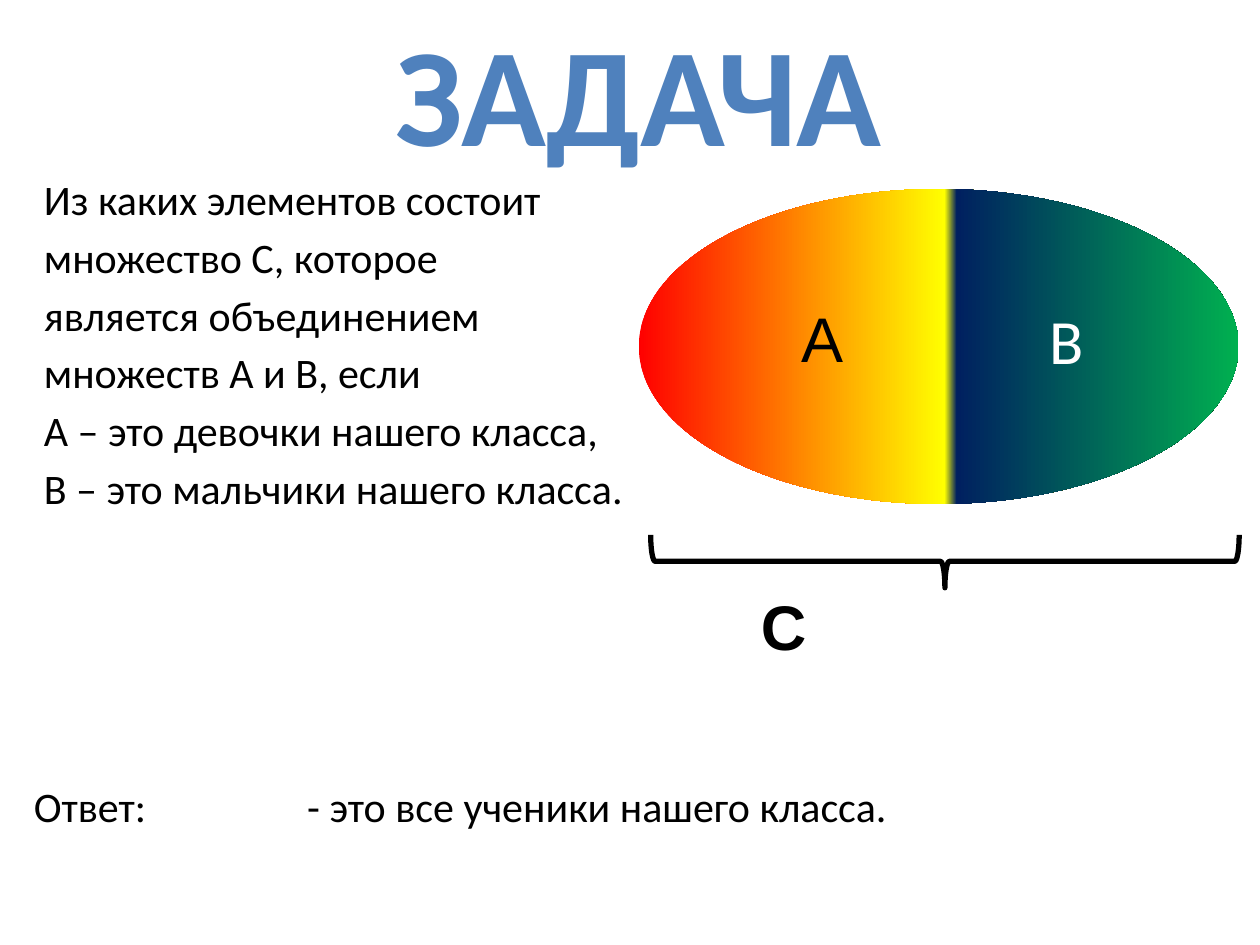
from dataclasses import dataclass

from lxml import etree
from pptx import Presentation
from pptx.dml.color import RGBColor
from pptx.enum import shapes, text
from pptx.oxml import ns
from pptx.util import Inches, Pt


@dataclass(frozen=True)
class Theme:
    black: str = "000000"
    white: str = "FFFFFF"
    heading: str = "4F81BD"
    gradient: tuple = ((0, "FF0000"), (51, "FFFF00"), (53, "002060"), (100, "00B050"))
    title_size: int = 80
    label_size: int = 36
    body_size: int = 24
    body_font: str = "Calibri"
    label_font: str = "Arial"


theme = Theme()


def format_text(box, size, font, color, bold=False):
    for para in box.text_frame.paragraphs:
        for span in para.runs:
            span.font.size = Pt(size)
            span.font.name = font
            span.font.bold = bold
            span.font.color.rgb = RGBColor.from_string(color)


def add_text(page, words, left, top, width, height):
    box = page.shapes.add_textbox(Inches(left), Inches(top), Inches(width), Inches(height))
    box.text_frame.word_wrap = True
    box.text_frame.text = words
    return box


deck = Presentation()
deck.slide_width = Inches(10)
deck.slide_height = Inches(7.5)
page = deck.slides.add_slide(deck.slide_layouts[5])

title = page.shapes.title
title.left, title.top = Inches(3.02), Inches(0)
title.width, title.height = Inches(4.1), Inches(1.45)
title.text_frame.text = "ЗАДАЧА"
title.text_frame.word_wrap = False
title.text_frame.auto_size = text.MSO_AUTO_SIZE.NONE
title.text_frame.vertical_anchor = text.MSO_ANCHOR.TOP
title.text_frame.paragraphs[0].alignment = text.PP_ALIGN.CENTER
format_text(title, theme.title_size, theme.body_font, theme.heading, bold=True)

task_lines = [
    "Из каких элементов состоит",
    "множество С, которое",
    "является объединением",
    "множеств А и В, если",
    "А – это девочки нашего класса,",
    "В – это мальчики нашего класса.",
]
task = add_text(page, "\n".join(task_lines), 0.25, 1.33, 5.33, 3)
for para in task.text_frame.paragraphs[1:]:
    para.space_before = Pt(4.2)
format_text(task, theme.body_size, theme.body_font, theme.black)

answer = add_text(page, "Ответ:\t- это все ученики нашего класса.", 0.17, 6.19, 8.67, 0.47)
para = answer.text_frame.paragraphs[0]
para.line_spacing = 0.9
tabs = etree.SubElement(para._p.get_or_add_pPr(), ns.qn("a:tabLst"))
etree.SubElement(tabs, ns.qn("a:tab"), pos=str(Inches(2.17)), algn="l")
format_text(answer, theme.body_size, theme.body_font, theme.black)

union = page.shapes.add_shape(
    shapes.MSO_SHAPE.OVAL, Inches(5.07), Inches(1.5), Inches(4.76), Inches(2.5)
)
union.shadow.inherit = False
union.line.fill.background()
union.fill.gradient()
union.fill.gradient_angle = 0
stops = union._element.spPr.find(".//" + ns.qn("a:gsLst"))
for stop in list(stops):
    stops.remove(stop)
for percent, color in theme.gradient:
    stop = etree.SubElement(stops, ns.qn("a:gs"), pos=str(percent * 1000))
    etree.SubElement(stop, ns.qn("a:srgbClr"), val=color)

brace = page.shapes.add_shape(
    shapes.MSO_SHAPE.LEFT_BRACE, Inches(7.29), Inches(2.12), Inches(0.42), Inches(4.67)
)
brace.rotation = 270
brace.shadow.inherit = False
brace.fill.background()
brace.line.color.rgb = RGBColor.from_string(theme.black)
brace.line.width = Pt(3)

set_labels = [
    ("А", 6.26, 2.33, 0.67, theme.label_font, theme.black, False),
    ("В", 8.23, 2.34, 0.83, theme.body_font, theme.white, False),
    ("С", 5.94, 4.61, 1.31, theme.label_font, theme.black, True),
]
for letter, left, top, width, font, color, bold in set_labels:
    label = add_text(page, letter, left, top, width, 0.71)
    format_text(label, theme.label_size, font, color, bold)

deck.save("out.pptx")
